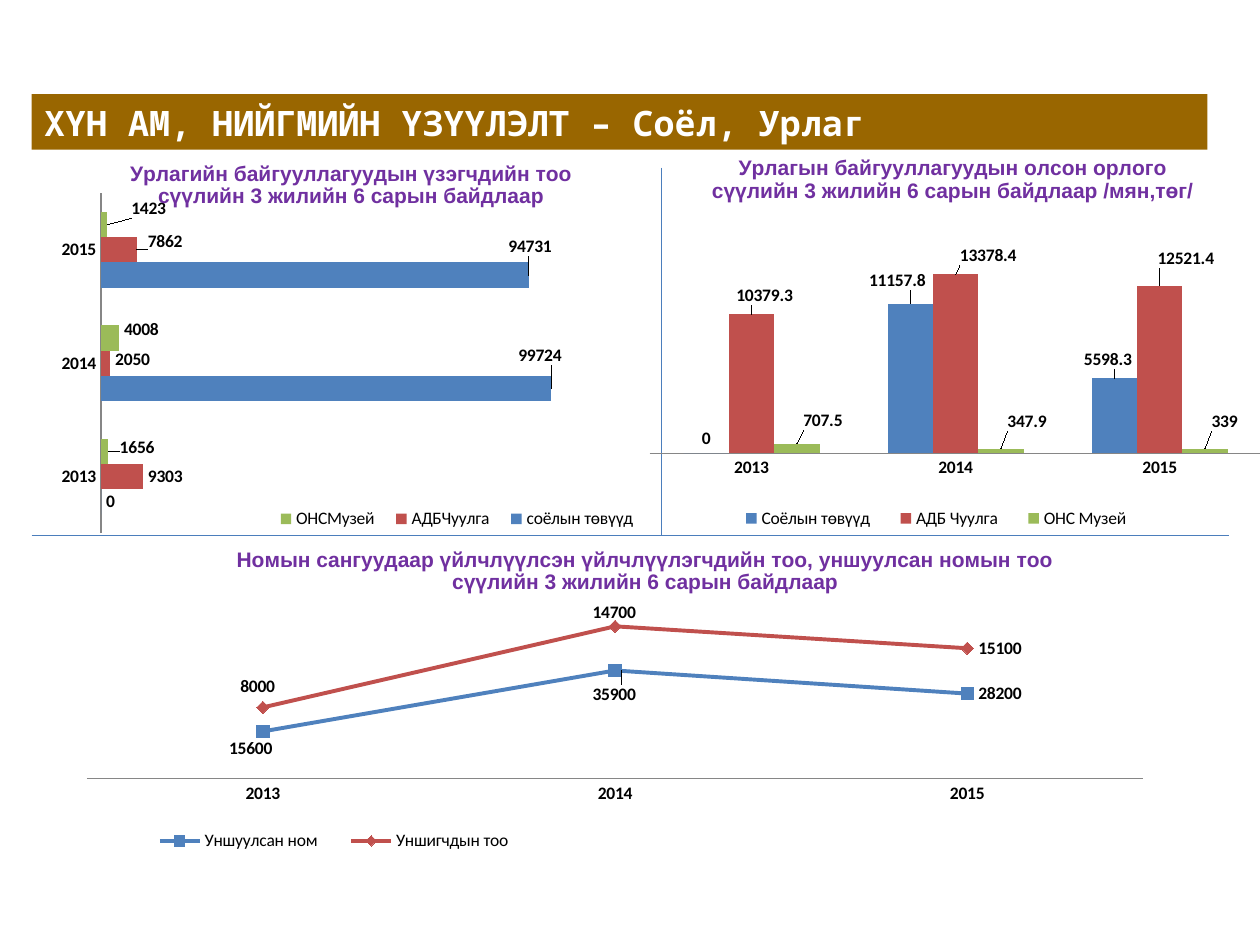
"""Build a slide with three charts on culture and arts indicators."""
from dataclasses import dataclass

from lxml import etree
from pptx import Presentation
from pptx.chart.data import CategoryChartData
from pptx.dml.color import RGBColor
from pptx.enum.chart import (XL_CHART_TYPE, XL_LABEL_POSITION, XL_LEGEND_POSITION,
                             XL_MARKER_STYLE, XL_TICK_MARK)
from pptx.enum.shapes import MSO_CONNECTOR, MSO_SHAPE
from pptx.enum.text import MSO_ANCHOR, PP_ALIGN
from pptx.oxml.ns import qn
from pptx.util import Cm, Pt

COLUMN = XL_CHART_TYPE.COLUMN_CLUSTERED
BAR = XL_CHART_TYPE.BAR_CLUSTERED
LINE = XL_CHART_TYPE.LINE_MARKERS_STACKED
OUTSIDE = XL_LABEL_POSITION.OUTSIDE_END
RIGHT = XL_LABEL_POSITION.RIGHT
MARKERS = (XL_MARKER_STYLE.SQUARE, XL_MARKER_STYLE.DIAMOND)


@dataclass(frozen=True)
class Theme:
    banner: RGBColor = RGBColor(0x99, 0x66, 0x00)
    white: RGBColor = RGBColor(0xFF, 0xFF, 0xFF)
    black: RGBColor = RGBColor(0, 0, 0)
    title: RGBColor = RGBColor(0x70, 0x30, 0xA0)
    divider: RGBColor = RGBColor(0x4B, 0x7E, 0xBC)
    axis: RGBColor = RGBColor(0x86, 0x86, 0x86)
    series: tuple = (RGBColor(0x4F, 0x81, 0xBD), RGBColor(0xC0, 0x50, 0x4D),
                     RGBColor(0x9B, 0xBB, 0x59))
    banner_size: Pt = Pt(20)
    title_size: Pt = Pt(12)
    chart_size: Pt = Pt(10)


theme = Theme()


def write_text(frame, text, *, font, size, color, align):
    for index, line in enumerate(text.split("\n")):
        paragraph = frame.paragraphs[0] if index == 0 else frame.add_paragraph()
        paragraph.alignment = align
        run = paragraph.add_run()
        run.text = line
        run.font.name, run.font.size, run.font.bold = font, size, True
        run.font.color.rgb = color


def set_layout(parent, before, **values):
    for old in parent.findall(qn("c:layout")):
        parent.remove(old)
    layout = etree.Element(qn("c:layout"))
    manual = etree.SubElement(layout, qn("c:manualLayout"))
    for tag, value in values.items():
        etree.SubElement(manual, qn("c:" + tag)).set("val", str(value))
    position = parent.index(parent.find(qn(before))) + 1 if before else 0
    parent.insert(position, layout)


presentation = Presentation()
presentation.slide_width, presentation.slide_height = Cm(25.4), Cm(19.05)
slide = presentation.slides.add_slide(presentation.slide_layouts[6])

banner = slide.shapes.add_shape(MSO_SHAPE.RECTANGLE, Cm(0.64), Cm(1.9), Cm(23.7), Cm(1.12))
banner.shadow.inherit = False
banner.fill.solid()
banner.fill.fore_color.rgb = theme.banner
banner.line.fill.background()
banner.text_frame.word_wrap = True
banner.text_frame.vertical_anchor = MSO_ANCHOR.MIDDLE
write_text(banner.text_frame, "ХҮН АМ, НИЙГМИЙН ҮЗҮҮЛЭЛТ – Соёл, Урлаг", font="Noto Sans Mono",
           size=theme.banner_size, color=theme.white, align=PP_ALIGN.JUSTIFY)

for x1, y1, x2, y2 in ((13.34, 3.38, 13.34, 10.8), (0.64, 10.8, 24.77, 10.8)):
    divider = slide.shapes.add_connector(MSO_CONNECTOR.STRAIGHT, Cm(x1), Cm(y1), Cm(x2), Cm(y2))
    divider.line.color.rgb = theme.divider
    divider.line.width = Pt(0.75)
    etree.SubElement(divider._element.spPr, qn("a:effectLst"))

charts = [
    dict(kind=COLUMN, box=(12.7, 2.54, 13.13, 8.46), maximum=16000,
         title="Урлагын байгууллагуудын олсон орлого\nсүүлийн 3 жилийн 6 сарын байдлаар /мян,төг/",
         title_at=(0.12, 0.06), plot=(0.03, 0.27, 0.94, 0.51), legend=(0.14, 0.9, 0.66, 0.07),
         series=[("Соёлын төвүүд", (0, 11157.8, 5598.3), {1: (-0.02, -0.02), 2: (-0.01, -0.01)}),
                 ("АДБ Чуулга", (10379.3, 13378.4, 12521.4),
                  {0: (0.02, -0.01), 1: (0.05, -0.01), 2: (0.04, -0.03)}),
                 ("ОНС Музей", (707.5, 347.9, 339),
                  {0: (0.04, -0.02), 1: (0.04, -0.03), 2: (0.03, -0.03)})]),
    dict(kind=BAR, box=(0.64, 2.74, 12.7, 8.26), maximum=120000,
         title="Урлагийн байгууллагуудын үзэгчдийн тоо\nсүүлийн 3 жилийн 6 сарын байдлаар",
         title_at=(0.15, 0.05), plot=(0.11, 0.14, 0.86, 0.83), legend=(0.37, 0.9, 0.61, 0.07),
         series=[("соёлын төвүүд", (0, 99724, 94731), {1: (-0.06, -0.08), 2: (-0.04, -0.07)}),
                 ("АДБЧуулга", (9303, 2050, 7862), {1: (0, -0.01), 2: (0.01, -0.02)}),
                 ("ОНСМузей", (1656, 4008, 1423),
                  {0: (0.01, -0.01), 1: (0, -0.02), 2: (0.03, -0.04)})]),
    dict(kind=LINE, box=(1.07, 10.59, 22.66, 6.99), maximum=60000,
         title="Номын сангуудаар үйлчлүүлсэн үйлчлүүлэгчдийн тоо, уншуулсан номын тоо\n"
               "сүүлийн 3 жилийн 6 сарын байдлаар",
         title_at=(0.16, 0.05), plot=(0.03, 0.21, 0.94, 0.52), legend=(0.07, 0.87, 0.36, 0.08),
         series=[("Уншуулсан ном", (15600, 35900, 28200), {0: (-0.04, 0.05), 1: (-0.03, 0.07)}),
                 ("Уншигчдын тоо", (8000, 14700, 15100), {0: (-0.03, -0.06), 1: (-0.03, -0.04)})]),
]

for item in charts:
    data = CategoryChartData()
    data.categories = ["2013", "2014", "2015"]
    for name, values, offsets in item["series"]:
        data.add_series(name, values)
    box = [Cm(length) for length in item["box"]]
    chart = slide.shapes.add_chart(item["kind"], *box, data).chart
    chart.font.name, chart.font.size = "Calibri", theme.chart_size
    chart.font.color.rgb = theme.black

    chart.has_title = True
    write_text(chart.chart_title.text_frame, item["title"], font="Arial",
               size=theme.title_size, color=theme.title, align=PP_ALIGN.CENTER)
    chart.chart_title.include_in_layout = False
    x, y = item["title_at"]
    set_layout(chart.chart_title._element, "c:tx", xMode="edge", yMode="edge", x=x, y=y)

    chart.has_legend = True
    chart.legend.position = XL_LEGEND_POSITION.TOP
    chart.legend.include_in_layout = False
    x, y, w, h = item["legend"]
    set_layout(chart.legend._element, "c:legendPos", xMode="edge", yMode="edge", x=x, y=y, w=w, h=h)

    chart_space = chart._chartSpace
    chart_element = chart_space.find(qn("c:chart"))
    plot_area = chart_element.find(qn("c:plotArea"))
    x, y, w, h = item["plot"]
    set_layout(plot_area, None, layoutTarget="inner", xMode="edge", yMode="edge", x=x, y=y, w=w, h=h)
    etree.SubElement(etree.SubElement(plot_area, qn("c:spPr")), qn("a:noFill"))
    background = etree.Element(qn("c:spPr"))
    etree.SubElement(background, qn("a:noFill"))
    etree.SubElement(etree.SubElement(background, qn("a:ln")), qn("a:noFill"))
    chart_element.addnext(background)

    chart.category_axis.major_tick_mark = XL_TICK_MARK.NONE
    chart.category_axis.tick_labels.font.bold = True
    chart.category_axis.format.line.color.rgb = theme.axis
    chart.category_axis.has_major_gridlines = False
    chart.value_axis.has_major_gridlines = False
    chart.value_axis.minimum_scale, chart.value_axis.maximum_scale = 0, item["maximum"]
    chart.value_axis.visible = False

    plot = chart.plots[0]
    plot.vary_by_categories = False
    is_line = item["kind"] == LINE
    if not is_line:
        plot.gap_width, plot.overlap = 150, 0
    for index, (series, (name, values, offsets)) in enumerate(zip(plot.series, item["series"])):
        color = theme.series[index]
        fills = [series.format.fill]
        if is_line:
            series.smooth = False
            series.format.line.color.rgb = color
            series.format.line.width = Pt(2.25)
            series.marker.style, series.marker.size = MARKERS[index], 7
            series.marker.format.line.color.rgb = color
            fills = [series.marker.format.fill]
        for fill in fills:
            fill.solid()
            fill.fore_color.rgb = color
        labels = series.data_labels
        labels.show_value = True
        labels.position = RIGHT if is_line else OUTSIDE
        labels.font.bold, labels.font.size = True, theme.chart_size
        for point, (x, y) in offsets.items():
            label = series.points[point].data_label
            label.position = labels.position
            label.font.bold, label.font.size = True, theme.chart_size
            set_layout(labels._element.findall(qn("c:dLbl"))[-1], "c:idx", x=x, y=y)

presentation.save("out.pptx")
